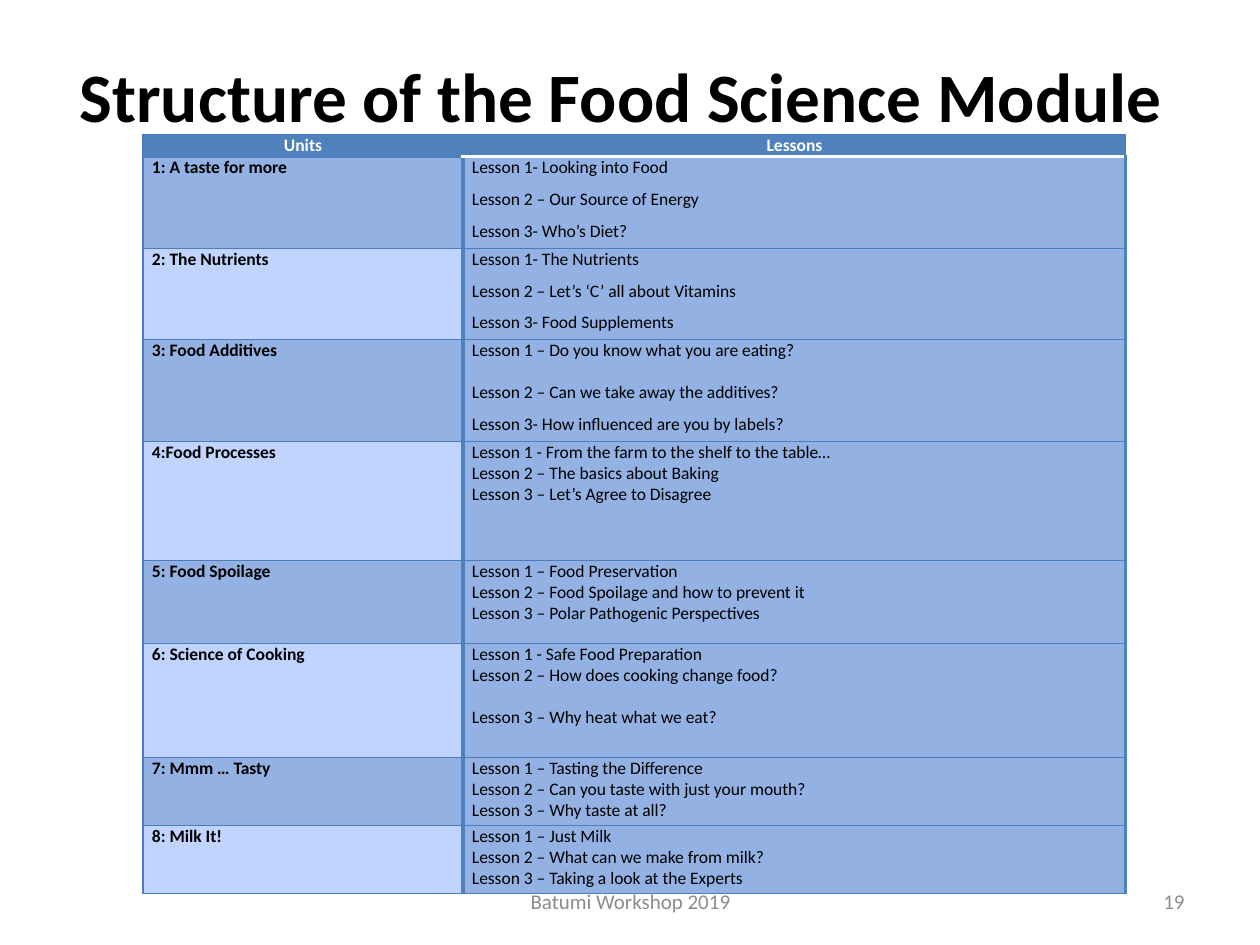
from lxml.etree import SubElement
from pptx import Presentation
from pptx.dml.color import RGBColor
from pptx.enum.text import MSO_ANCHOR, PP_ALIGN
from pptx.oxml.ns import qn
from pptx.util import Pt

PX = 914400 // 126
COLORS = {
    "header": "4F81BD",
    "line": "4B7EBC",
    "dark": "93B1E3",
    "light": "C0D4FF",
    "white": "FFFFFF",
    "black": "000000",
    "gray": "8C8C8C",
}
THIN = ("line", 0.75)
THICK = ("header", 2)
HEADER_RULE = ("white", 2)

UNITS = [
    ("1: A taste for more", 92, [
        ("Lesson 1- Looking into Food", 6),
        ("Lesson 2 – Our Source of Energy", 6),
        ("Lesson 3- Who’s Diet?", 6)]),
    ("2: The Nutrients", 91, [
        ("Lesson 1- The Nutrients", 6),
        ("Lesson 2 – Let’s ‘C’ all about Vitamins", 6),
        ("Lesson 3- Food Supplements", 0)]),
    ("3: Food Additives", 102, [
        ("Lesson 1 – Do you know what you are eating?", 12),
        ("Lesson 2 – Can we take away the additives?", 6),
        ("Lesson 3- How influenced are you by labels?", 0)]),
    ("4:Food Processes", 119, [
        ("Lesson 1 - From the farm to the shelf to the table…", 0),
        ("Lesson 2 – The basics about Baking", 0),
        ("Lesson 3 – Let’s Agree to Disagree", 12)]),
    ("5: Food Spoilage", 83, [
        ("Lesson 1 – Food Preservation", 0),
        ("Lesson 2 – Food Spoilage and how to prevent it", 0),
        ("Lesson 3 – Polar Pathogenic Perspectives", 0)]),
    ("6: Science of Cooking", 114, [
        ("Lesson 1 - Safe Food Preparation", 0),
        ("Lesson 2 – How does cooking change food?", 12),
        ("Lesson 3 – Why heat what we eat?", 0)]),
    ("7: Mmm … Tasty", 68, [
        ("Lesson 1 – Tasting the Difference", 0),
        ("Lesson 2 – Can you taste with just your mouth?", 0),
        ("Lesson 3 – Why taste at all?", 0)]),
    ("8: Milk It!", 68, [
        ("Lesson 1 – Just Milk", 0),
        ("Lesson 2 – What can we make from milk?", 0),
        ("Lesson 3 – Taking a look at the Experts", 0)]),
]


class Deck:
    def __init__(self, width, height):
        self.presentation = Presentation()
        self.presentation.slide_width = width * PX
        self.presentation.slide_height = height * PX
        self.slide = self.presentation.slides.add_slide(
            self.presentation.slide_layouts[6])

    def style(self, paragraph, text, size, color, bold, align, after=0):
        paragraph.text = text
        paragraph.alignment = align
        paragraph.space_after = Pt(after)
        font = paragraph.font
        font.name = "Calibri"
        font.size = Pt(size)
        font.bold = bold
        font.color.rgb = RGBColor.from_string(COLORS[color])

    def text(self, box, text, size, color, align, bold=False):
        frame = self.slide.shapes.add_textbox(*(n * PX for n in box)).text_frame
        frame.word_wrap = True
        frame.vertical_anchor = MSO_ANCHOR.MIDDLE
        self.style(frame.paragraphs[0], text, size, color, bold, align)

    def table(self, left, top, widths, heights):
        table = self.slide.shapes.add_table(
            len(heights), len(widths), left * PX, top * PX,
            sum(widths) * PX, sum(heights) * PX).table
        for column, width in zip(table.columns, widths):
            column.width = width * PX
        for row, height in zip(table.rows, heights):
            row.height = height * PX
        return table

    def cell(self, cell, lines, fill, borders, color="black", bold=False,
             align=PP_ALIGN.LEFT):
        cell.margin_left = cell.margin_right = 9 * PX
        cell.margin_top = cell.margin_bottom = 0
        cell.fill.solid()
        cell.fill.fore_color.rgb = RGBColor.from_string(COLORS[fill])
        frame = cell.text_frame
        for index, (text, after) in enumerate(lines):
            paragraph = frame.add_paragraph() if index else frame.paragraphs[0]
            self.style(paragraph, text, 10, color, bold, align, after)
        self.borders(cell, borders)

    def borders(self, cell, borders):
        properties = cell._tc.get_or_add_tcPr()
        for index, (side, (color, width)) in enumerate(zip("LRTB", borders)):
            line = SubElement(properties, qn(f"a:ln{side}"), w=str(Pt(width)))
            solid = SubElement(line, qn("a:solidFill"))
            SubElement(solid, qn("a:srgbClr"), val=COLORS[color])
            properties.insert(index, line)


def main():
    deck = Deck(1260, 945)
    curriculum = deck.table(143, 135, [320, 663],
                            [22] + [height for _, height, _ in UNITS])
    header_borders = [(THIN, THICK, THIN, THICK),
                      (THICK, THIN, THIN, HEADER_RULE)]
    for column, heading in enumerate(["Units", "Lessons"]):
        deck.cell(curriculum.cell(0, column), [(heading, 0)], "header",
                  header_borders[column], "white", True, PP_ALIGN.CENTER)
    for row, (unit, _, lessons) in enumerate(UNITS, 1):
        first = row == 1
        deck.cell(curriculum.cell(row, 0), [(unit, 0)],
                  "dark" if row % 2 else "light",
                  (THIN, THICK, THICK if first else THIN, THIN), bold=True)
        deck.cell(curriculum.cell(row, 1), lessons, "dark",
                  (THICK, THICK, HEADER_RULE if first else THIN, THIN))

    deck.text((54, 16, 1134, 158), "Structure of the Food Science Module",
              39.6, "black", PP_ALIGN.CENTER, True)
    deck.text((903, 876, 294, 50), "19", 12, "gray", PP_ALIGN.RIGHT)
    deck.text((431, 876, 399, 50), "Batumi Workshop 2019", 12, "gray",
              PP_ALIGN.CENTER)
    deck.presentation.save("out.pptx")


if __name__ == "__main__":
    main()
